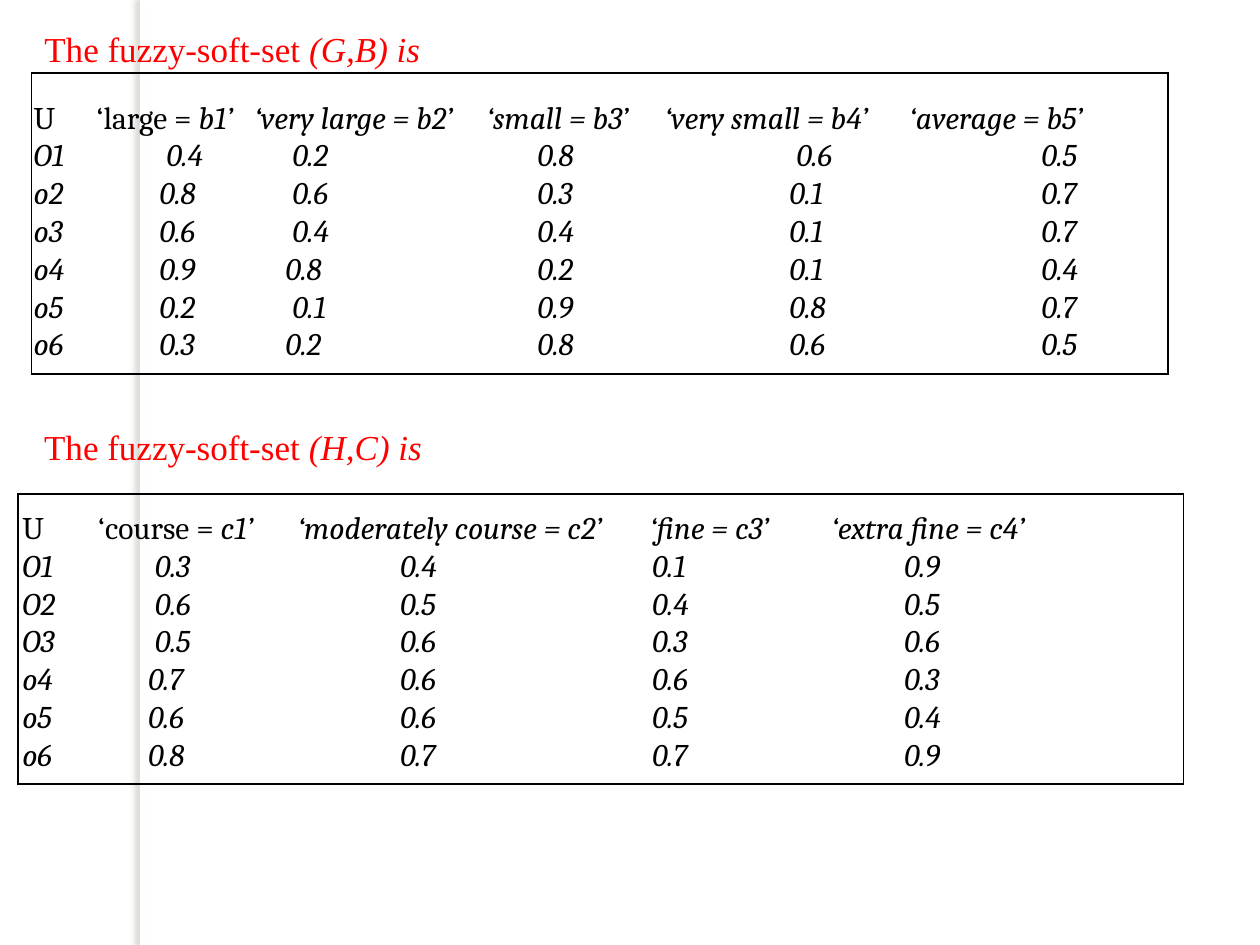
import dataclasses

import lxml.etree
import pptx
import pptx.dml.color
import pptx.enum.shapes
import pptx.enum.text
import pptx.oxml.ns
import pptx.util

Cm = pptx.util.Cm
Pt = pptx.util.Pt
qn = pptx.oxml.ns.qn

INCH = 2.54
COLORS = {"head": "FF0000", "text": "000000", "band": "FFFFFF", "shade": "736F63"}
Box = tuple[float, float, float, float]


@dataclasses.dataclass
class Grid:
    text_box: Box
    frame: Box
    top: float
    lead: str
    heads: list[str]
    head_stops: list[float]
    rows: list[str]
    row_stops: list[float]


GRIDS = [
    Grid((0.43, 1.07, 23.93, 6.4), (0.64, 1.47, 22.91, 6.07), 0.9,
         "U\t‘large = ",
         ["b1’", "‘very large = b2’", "‘small = b3’", "‘very small = b4’", "‘average = b5’"],
         [1.27, 4.45, 9.13, 12.72, 17.65],
         ["O1| 0.4| 0.2|0.8| 0.6|0.5",
          "o2|0.8| 0.6|0.3|0.1|0.7",
          "o3|0.6| 0.4|0.4|0.1|0.7",
          "o4|0.9|0.8|0.2|0.1|0.4",
          "o5|0.2| 0.1|0.9|0.8|0.7",
          "o6|0.3|0.2|0.8|0.6|0.5"],
         [n * INCH for n in (1, 2, 4, 6, 8)]),
    Grid((0.2, 10.11, 23.7, 5.64), (0.36, 9.96, 23.5, 5.84), 0.13,
         "U\t‘course = ",
         ["c1’", "‘moderately course = c2’", "‘fine = c3’", "‘extra fine = c4’"],
         [1.53, 5.55, 12.65, 16.31],
         ["O1| 0.3|0.4|0.1|0.9",
          "O2| 0.6|0.5|0.4|0.5",
          "O3| 0.5|0.6|0.3|0.6",
          "o4|0.7|0.6|0.6|0.3",
          "o5|0.6|0.6|0.5|0.4",
          "o6|0.8|0.7|0.7|0.9"],
         [n * INCH for n in (1, 3, 5, 7)]),
]


def rgb(name: str) -> pptx.dml.color.RGBColor:
    return pptx.dml.color.RGBColor.from_string(COLORS[name])


def place(box: Box) -> list[int]:
    return [Cm(n) for n in box]


def add_run(para, text: str, size: int, face: str, color: str, italic: bool = False) -> None:
    run = para.add_run()
    run.text = text
    run.font.size = Pt(size)
    run.font.name = face
    run.font.italic = italic
    run.font.color.rgb = rgb(color)


def add_color(parent, name: str):
    return lxml.etree.SubElement(parent, qn("a:srgbClr"), val=COLORS[name])


def set_tabs(para, stops: list[float]) -> None:
    tabs = lxml.etree.SubElement(para._p.get_or_add_pPr(), qn("a:tabLst"))
    for stop in stops:
        lxml.etree.SubElement(tabs, qn("a:tab"), pos=str(int(Cm(stop))), algn="l")


def draw_band(slide):
    """Draw the white strip that casts a soft shadow to its left."""
    kind = pptx.enum.shapes.MSO_SHAPE.RECTANGLE
    band = slide.shapes.add_shape(kind, *place((2.82, 0, 0.2, 19.05)))
    band.fill.solid()
    band.fill.fore_color.rgb = rgb("band")
    band.line.fill.background()
    band.shadow.inherit = False
    effects = band.element.spPr.find(qn("a:effectLst"))
    shade = lxml.etree.SubElement(
        effects, qn("a:outerShdw"), blurRad=str(int(Pt(3))), dist=str(int(Pt(3))),
        dir="10800000", algn="tl", rotWithShape="0")
    lxml.etree.SubElement(add_color(shade, "shade"), qn("a:alpha"), val="25000")
    return band


def draw_frame(slide, box: Box) -> None:
    table = slide.shapes.add_table(1, 1, *place(box)).table
    table.first_row = table.horz_banding = False
    cell = table.cell(0, 0)
    props = cell._tc.get_or_add_tcPr()
    for side in ("L", "R", "T", "B"):
        line = lxml.etree.SubElement(props, qn("a:ln" + side), w=str(int(Pt(1))))
        add_color(lxml.etree.SubElement(line, qn("a:solidFill")), "text")
    cell.fill.background()


def draw_grid(slide, grid: Grid) -> None:
    frame = slide.shapes.add_textbox(*place(grid.text_box)).text_frame
    frame.word_wrap = True
    frame.margin_top = Cm(grid.top)
    style = (18, "Cambria", "text")
    para = frame.paragraphs[0]
    set_tabs(para, grid.head_stops)
    add_run(para, grid.lead, *style)
    add_run(para, "\t".join(grid.heads), *style, italic=True)
    for row in grid.rows:
        para = frame.add_paragraph()
        set_tabs(para, grid.row_stops)
        add_run(para, row.replace("|", "\t"), *style, italic=True)
    draw_frame(slide, grid.frame)


def fill_head(shape, name: str, wrap: bool) -> None:
    frame = shape.text_frame
    frame.word_wrap = wrap
    frame.auto_size = pptx.enum.text.MSO_AUTO_SIZE.SHAPE_TO_FIT_TEXT
    frame.vertical_anchor = pptx.enum.text.MSO_ANCHOR.TOP
    para = frame.paragraphs[0]
    para.alignment = pptx.enum.text.PP_ALIGN.LEFT
    style = (20, "Times New Roman", "head")
    add_run(para, "The fuzzy-soft-set ", *style)
    add_run(para, f"({name}) is", *style, italic=True)


def main() -> None:
    deck = pptx.Presentation()
    deck.slide_width, deck.slide_height = Cm(25.4), Cm(19.05)
    slide = deck.slides.add_slide(deck.slide_layouts[5])
    title = slide.shapes.title
    title.left, title.top, title.width, title.height = place((0.64, 0.43, 9.5, 1.12))
    title.element.addprevious(draw_band(slide).element)
    fill_head(title, "G,B", True)
    for grid in GRIDS:
        draw_grid(slide, grid)
    label = slide.shapes.add_textbox(*place((0.64, 8.46, 8.18, 1.12)))
    fill_head(label, "H,C", False)
    deck.save("out.pptx")


if __name__ == "__main__":
    main()
